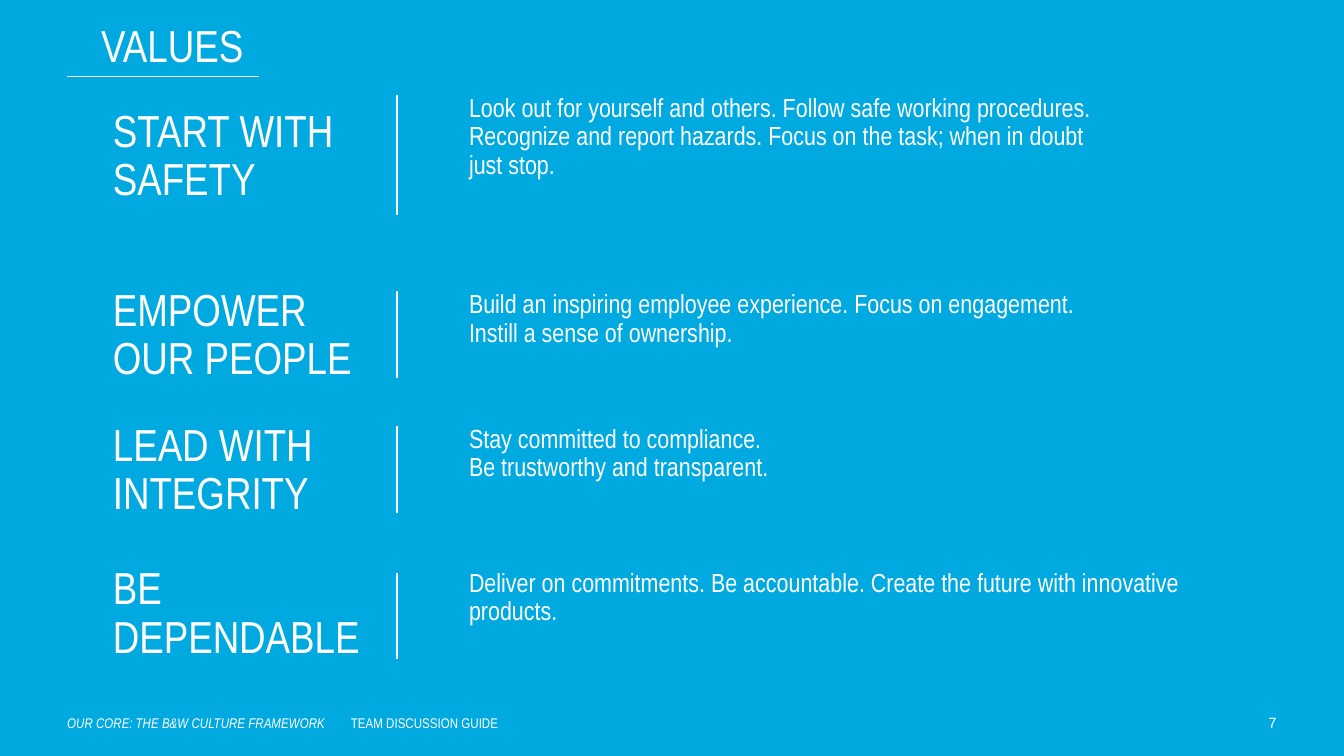
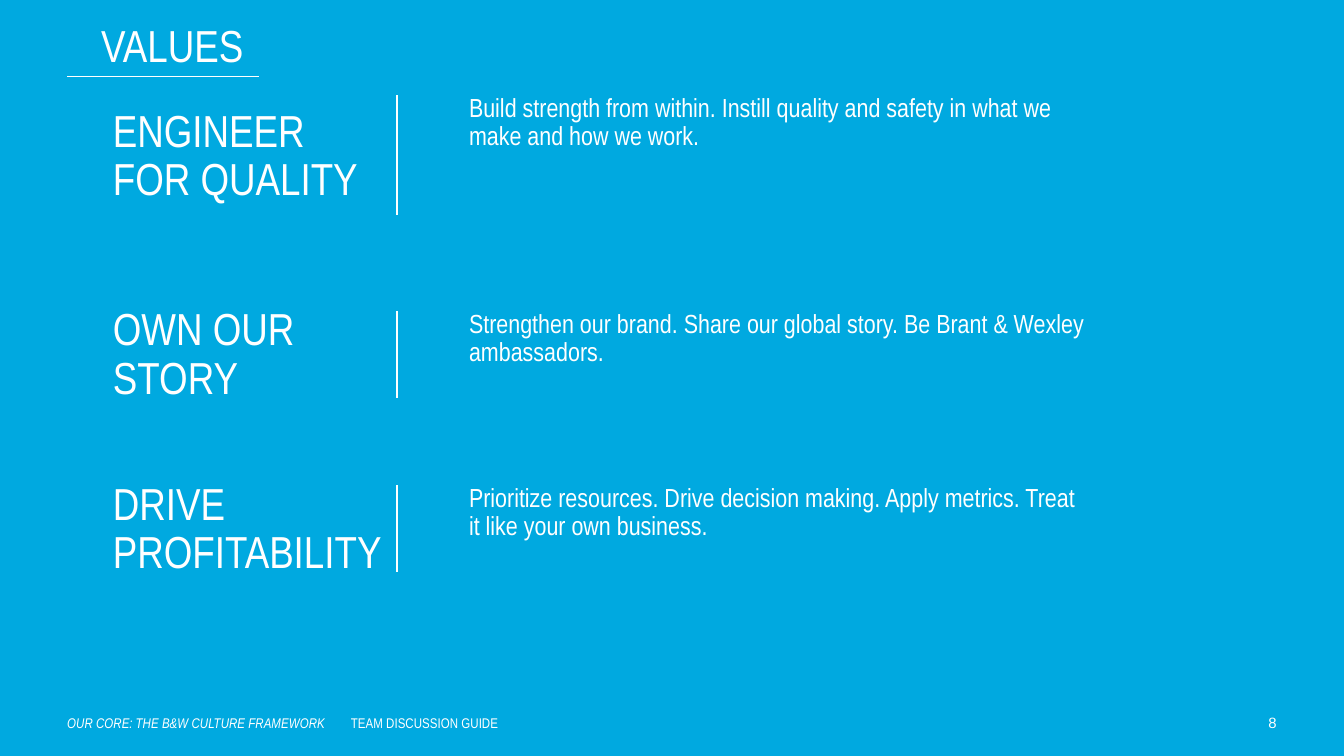
from collections import namedtuple

from lxml.etree import SubElement
from pptx import Presentation
from pptx.dml.color import RGBColor
from pptx.enum.shapes import MSO_CONNECTOR
from pptx.enum.text import MSO_ANCHOR, MSO_AUTO_SIZE, PP_ALIGN
from pptx.oxml.ns import qn
from pptx.util import Pt

COLORS = {"background": "00A9E0", "ink": "FFFFFF"}
NARROW, REGULAR = "Arial Narrow", "Arial"
LINE_SPACING = 0.9

# Columns shared by every row of values
HEADING_LEFT, HEADING_WIDTH = 60.5, 158
DIVIDER_X = 212.5
DESCRIPTION_LEFT = 251.25

# Footer band
FOOTER_TOP, FOOTER_HEIGHT, MARGIN = 381.75, 14.5, 36
GUIDE_TAB = 152

# Heights of a row's heading and of its divider
TALL, SHORT = (66, 64), (48, 46.5)

Value = namedtuple("Value", "top heading description width height size divider_shift",
                   defaults=(SHORT, 0))

SLIDES = {
    7: [
        Value(51, "START WITH\vSAFETY",
              "Look out for yourself and others. Follow safe working procedures. "
              "Recognize and report hazards. Focus on the task; when in doubt just stop.",
              336, 80.5, TALL),
        Value(156, "EMPOWER\vOUR PEOPLE",
              "Build an inspiring employee experience. Focus on engagement. "
              "Instill a sense of ownership.", 334, 57),
        Value(228.25, "LEAD WITH INTEGRITY",
              "Stay committed to compliance.\vBe trustworthy and transparent.", 330.5, 48),
        Value(305.25, "BE DEPENDABLE",
              "Deliver on commitments. Be accountable. Create the future with "
              "innovative products.", 392.5, 48, SHORT, 1.5),
    ],
    8: [
        Value(51, "ENGINEER\vFOR QUALITY",
              "Build strength from within. Instill quality and safety in what we "
              "make and how we work.", 336, 80.5, TALL),
        Value(166.5, "OWN OUR\vSTORY",
              "Strengthen our brand. Share our global story. Be Brant & Wexley "
              "ambassadors.", 334, 57),
        Value(259.75, "DRIVE\vPROFITABILITY",
              "Prioritize resources. Drive decision making. Apply metrics. Treat it "
              "like your own business.", 330.5, 48),
    ],
}


def rgb(name):
    return RGBColor.from_string(COLORS[name])


def style_frame(frame, anchor=MSO_ANCHOR.TOP):
    frame.margin_left = frame.margin_top = frame.margin_right = frame.margin_bottom = 0
    frame.word_wrap = True
    frame.auto_size = MSO_AUTO_SIZE.NONE
    frame.vertical_anchor = anchor


def style_runs(paragraph, size, font=NARROW):
    for run in paragraph.runs:
        run.font.size = Pt(size)
        run.font.name = font
        run.font.color.rgb = rgb("ink")


def add_text(slide, left, top, width, height, text, size, font=NARROW,
             anchor=MSO_ANCHOR.TOP):
    box = slide.shapes.add_textbox(Pt(left), Pt(top), Pt(width), Pt(height))
    style_frame(box.text_frame, anchor)
    paragraph = box.text_frame.paragraphs[0]
    paragraph.text = text
    style_runs(paragraph, size, font)
    return paragraph


def add_rule(slide, x1, y1, x2, y2):
    rule = slide.shapes.add_connector(MSO_CONNECTOR.STRAIGHT, Pt(x1), Pt(y1), Pt(x2), Pt(y2))
    rule.line.color.rgb = rgb("ink")
    rule.line.width = Pt(1)
    SubElement(rule._element.spPr, qn("a:effectLst"))


def add_title(slide, text):
    title = slide.shapes.title
    title.left, title.top, title.width, title.height = 0, 0, Pt(184.5), Pt(51)
    style_frame(title.text_frame, MSO_ANCHOR.MIDDLE)
    paragraph = title.text_frame.paragraphs[0]
    paragraph.text = text
    paragraph.alignment = PP_ALIGN.CENTER
    paragraph.line_spacing = LINE_SPACING
    style_runs(paragraph, 24)
    add_rule(slide, MARGIN, 41, 139, 41)


def add_value(slide, value):
    heading_height, divider_height = value.size
    heading = add_text(slide, HEADING_LEFT, value.top, HEADING_WIDTH, heading_height,
                       value.heading, 24, anchor=MSO_ANCHOR.MIDDLE)
    description = add_text(slide, DESCRIPTION_LEFT, value.top, value.width, value.height,
                           value.description, 14)
    heading.line_spacing = description.line_spacing = LINE_SPACING
    divider_top = value.top + value.divider_shift
    add_rule(slide, DIVIDER_X, divider_top, DIVIDER_X, divider_top + divider_height)


def add_footer(slide, page):
    # Framework name in italics, guide name at a tab stop
    footer = add_text(slide, MARGIN, FOOTER_TOP + 1.25, 313, FOOTER_HEIGHT,
                      "OUR CORE: THE B&W CULTURE FRAMEWORK", 7.5)
    footer.runs[0].font.italic = True
    footer.add_run().text = "\tTEAM DISCUSSION GUIDE"
    tabs = SubElement(footer._p.get_or_add_pPr(), qn("a:tabLst"))
    SubElement(tabs, qn("a:tab"), pos=str(Pt(GUIDE_TAB)), algn="l")
    style_runs(footer, 7.5)

    # Page number
    number = add_text(slide, 648, FOOTER_TOP + 0.75, 36, FOOTER_HEIGHT, str(page), 8, REGULAR)
    number.alignment = PP_ALIGN.RIGHT


def main():
    prs = Presentation()
    prs.slide_width, prs.slide_height = Pt(720), Pt(405)
    background = prs.slide_master.background.fill
    background.solid()
    background.fore_color.rgb = rgb("background")
    title_only = prs.slide_layouts.get_by_name("Title Only")

    for page, values in SLIDES.items():
        slide = prs.slides.add_slide(title_only)
        add_title(slide, "VALUES")
        for value in values:
            add_value(slide, value)
        add_footer(slide, page)

    prs.save("out.pptx")


if __name__ == "__main__":
    main()
